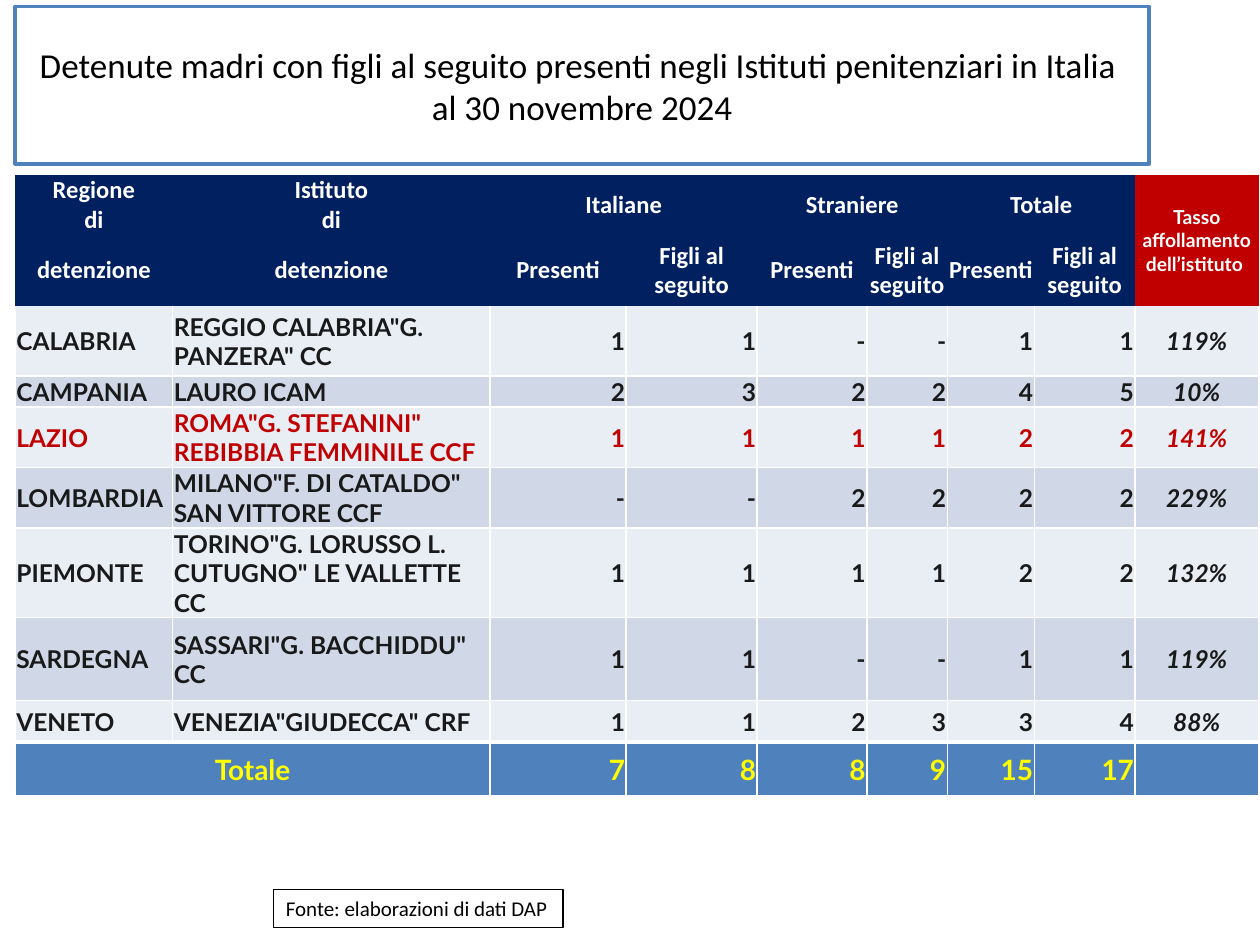
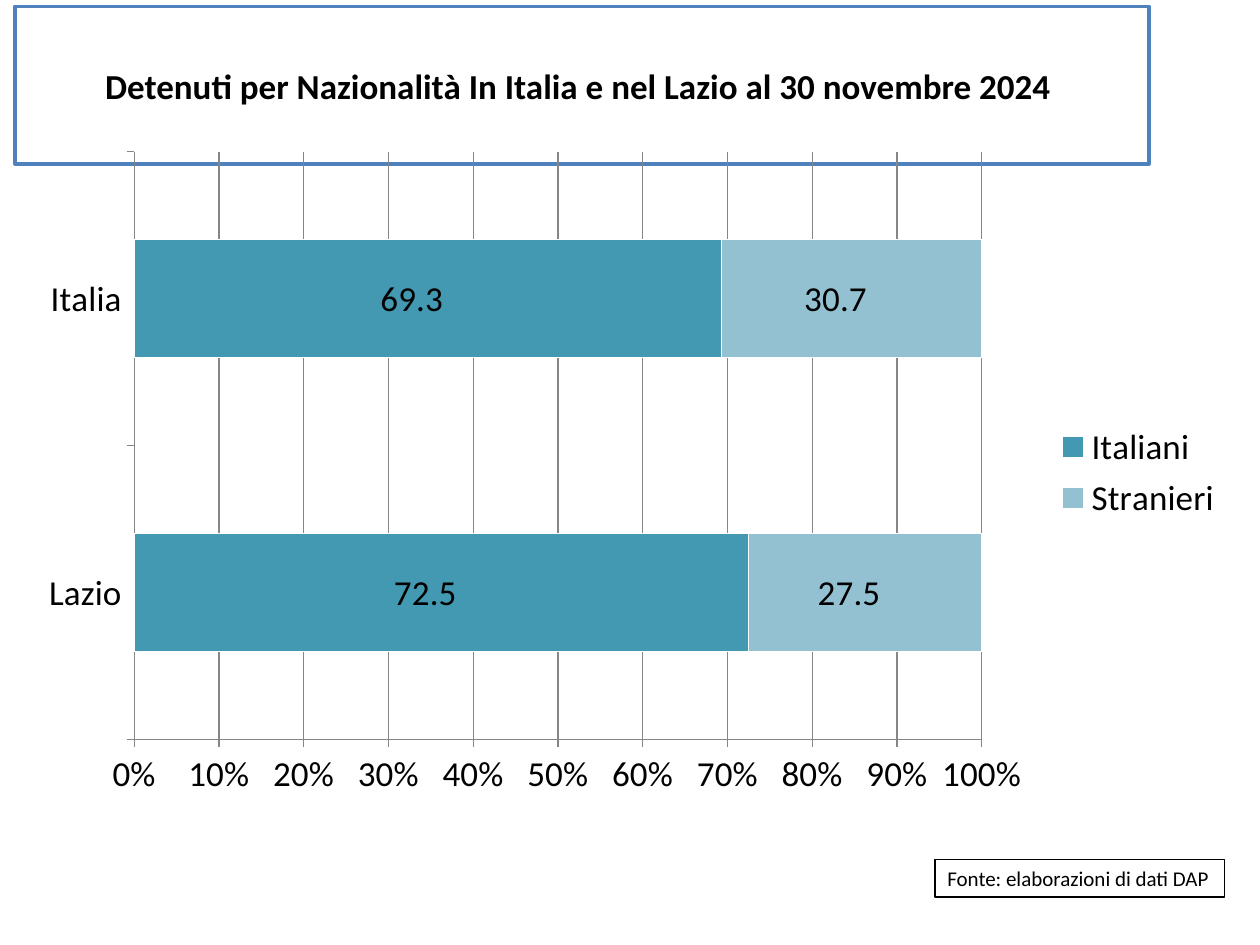
from lxml.etree import SubElement
from pptx import Presentation
from pptx.chart.data import CategoryChartData
from pptx.dml.color import RGBColor
from pptx.enum.chart import XL_CHART_TYPE, XL_LABEL_POSITION, XL_LEGEND_POSITION, XL_TICK_MARK
from pptx.enum.shapes import MSO_SHAPE
from pptx.enum.text import MSO_ANCHOR, PP_ALIGN
from pptx.oxml import parse_xml
from pptx.oxml.ns import nsdecls, qn
from pptx.util import Inches, Pt

# Colours
BLACK = RGBColor(0x00, 0x00, 0x00)
WHITE = RGBColor(0xFF, 0xFF, 0xFF)
BLUE = RGBColor(0x4F, 0x81, 0xBD)
NAVY = RGBColor(0x00, 0x20, 0x60)
RED = RGBColor(0xC0, 0x00, 0x00)
YELLOW = RGBColor(0xFF, 0xFF, 0x00)
INK = RGBColor(0x19, 0x19, 0x1A)
PALE = RGBColor(0xE9, 0xED, 0xF4)
LIGHT = RGBColor(0xD0, 0xD8, 0xE8)
GREY = RGBColor(0x86, 0x86, 0x86)
TEAL = RGBColor(0x43, 0x99, 0xB1)
SKY = RGBColor(0x93, 0xC1, 0xD2)

# Contents of the table
COLUMN_WIDTHS = [1.25, 2.52, 1.08, 1.04, 0.87, 0.64, 0.69, 0.8, 0.98]
ROW_HEIGHTS = [0.24, 0.24, 0.55, 0.56, 0.24, 0.48, 0.48, 0.71, 0.66, 0.33, 0.43]
PRISONS = [
    ("CALABRIA", 'REGGIO CALABRIA"G. PANZERA" CC', "1", "1", "-", "-", "1", "1", "119%"),
    ("CAMPANIA", "LAURO ICAM", "2", "3", "2", "2", "4", "5", "10%"),
    ("LAZIO", 'ROMA"G. STEFANINI" REBIBBIA FEMMINILE CCF', "1", "1", "1", "1", "2", "2", "141%"),
    ("LOMBARDIA", 'MILANO"F. DI CATALDO" SAN VITTORE CCF', "-", "-", "2", "2", "2", "2", "229%"),
    ("PIEMONTE", 'TORINO"G. LORUSSO L. CUTUGNO" LE VALLETTE CC',
     "1", "1", "1", "1", "2", "2", "132%"),
    ("SARDEGNA", 'SASSARI"G. BACCHIDDU" CC', "1", "1", "-", "-", "1", "1", "119%"),
    ("VENETO", 'VENEZIA"GIUDECCA" CRF', "1", "1", "2", "3", "3", "4", "88%"),
]
TOTALS = ["7", "8", "8", "9", "15", "17"]
HEADER_ROWS = 3
LABEL_FORMAT = "#,##0.0\\ _€_-"


class Report:
    """Holds the deck, its style and the current page."""

    font = "Calibri"
    table_font = "Lato"

    def __init__(self):
        self.deck = Presentation()
        self.deck.slide_width, self.deck.slide_height = Inches(10), Inches(7.5)
        self.page = None

    def new_page(self):
        self.page = self.deck.slides.add_slide(self.deck.slide_layouts[6])

    def add_span(self, paragraph, text, size, color=BLACK, font=None, bold=False, italic=False):
        span = paragraph.add_run()
        span.text = text
        span.font.name = font or self.font
        span.font.size = Pt(size)
        span.font.bold, span.font.italic = bold, italic
        span.font.color.rgb = color

    def framed_box(self, left, top, width, height, line_color, line_width):
        box = self.page.shapes.add_shape(
            MSO_SHAPE.RECTANGLE, Inches(left), Inches(top), Inches(width), Inches(height))
        box.shadow.inherit = False
        box.fill.solid()
        box.fill.fore_color.rgb = WHITE
        box.line.color.rgb = line_color
        box.line.width = Pt(line_width)
        return box.text_frame

    def title(self, *lines, bold=False):
        frame = self.framed_box(0.12, 0.05, 9, 1.25, BLUE, 2)
        frame.word_wrap = True
        frame.vertical_anchor = MSO_ANCHOR.MIDDLE
        paragraph = frame.paragraphs[0]
        paragraph.alignment = PP_ALIGN.CENTER
        for index, line in enumerate(lines):
            if index:
                paragraph.add_line_break()
            self.add_span(paragraph, line, 20, bold=bold)

    def source_note(self, left, top):
        frame = self.framed_box(left, top, 2.3, 0.3, BLACK, 0.75)
        frame.word_wrap = False
        frame.vertical_anchor = MSO_ANCHOR.TOP
        paragraph = frame.paragraphs[0]
        paragraph.alignment = PP_ALIGN.LEFT
        self.add_span(paragraph, "Fonte: elaborazioni di dati DAP", 12)

    def table(self, left, top, widths, heights):
        table = self.page.shapes.add_table(
            len(heights), len(widths), Inches(left), Inches(top),
            Inches(sum(widths)), Inches(sum(heights))).table
        table.first_row = table.horz_banding = False
        for column, width in zip(table.columns, widths):
            column.width = Inches(width)
        for row, height in zip(table.rows, heights):
            row.height = Inches(height)
        return table

    def paint_cell(self, cell, fill, borders, margin=0.0):
        """Borders are widths in points for left, right, top and bottom; 0 hides one."""
        cell.fill.solid()
        cell.fill.fore_color.rgb = fill
        cell.vertical_anchor = MSO_ANCHOR.MIDDLE
        cell.margin_left = cell.margin_right = cell.margin_top = Inches(margin)
        cell.margin_bottom = 0
        properties = cell._tc.get_or_add_tcPr()
        for index, (side, width) in enumerate(zip("LRTB", borders)):
            paint = (f'<a:solidFill><a:srgbClr val="{WHITE}"/></a:solidFill>'
                     if width else "<a:noFill/>")
            properties.insert(index, parse_xml(
                f'<a:ln{side} {nsdecls("a")} w="{Pt(width)}">{paint}</a:ln{side}>'))

    def fill_cell(self, cell, text, align, size=14, **style):
        paragraph = cell.text_frame.paragraphs[0]
        paragraph.alignment = align
        self.add_span(paragraph, text, size, bold=True, **style)

    def stacked_bars(self, left, top, width, height, categories, series, plot_area):
        data = CategoryChartData(number_format=LABEL_FORMAT)
        data.categories = categories
        for name, values, _ in series:
            data.add_series(name, values)
        chart = self.page.shapes.add_chart(
            XL_CHART_TYPE.BAR_STACKED_100, Inches(left), Inches(top),
            Inches(width), Inches(height), data).chart
        chart.has_title = False
        chart.font.name = self.font
        chart.font.size = Pt(20)
        chart.font.color.rgb = BLACK
        chart.has_legend = True
        chart.legend.position = XL_LEGEND_POSITION.RIGHT
        chart.legend.include_in_layout = False

        # Axes
        for axis in (chart.category_axis, chart.value_axis):
            axis.major_tick_mark = XL_TICK_MARK.OUTSIDE
            axis.minor_tick_mark = XL_TICK_MARK.NONE
            axis.format.line.color.rgb = GREY
        chart.category_axis.has_major_gridlines = False
        axis = chart.value_axis
        axis.has_major_gridlines = True
        axis.major_gridlines.format.line.color.rgb = GREY
        axis.tick_labels.number_format = "0%"
        axis.tick_labels.number_format_is_linked = False

        # Bars and their labels
        plot = chart.plots[0]
        plot.vary_by_categories = False
        plot.gap_width, plot.overlap = 150, 100
        for bars, (_, _, color) in zip(plot.series, series):
            bars.format.fill.solid()
            bars.format.fill.fore_color.rgb = color
            bars.format.line.color.rgb = WHITE
            labels = bars.data_labels
            labels.show_value = True
            labels.position = XL_LABEL_POSITION.CENTER
            labels.number_format = LABEL_FORMAT
            labels.number_format_is_linked = False

        # Fixed place of the plot, as fractions of the chart
        area = chart._chartSpace.chart.plotArea
        for old in area.findall(qn("c:layout")):
            area.remove(old)
        layout = parse_xml(f'<c:layout {nsdecls("c")}/>')
        manual = SubElement(layout, qn("c:manualLayout"))
        settings = [("layoutTarget", "inner"), ("xMode", "edge"), ("yMode", "edge"),
                    *zip("xywh", plot_area)]
        for tag, value in settings:
            SubElement(manual, qn(f"c:{tag}")).set("val", str(value))
        area.insert(0, layout)


def mothers_page(report):
    report.new_page()
    report.title("Detenute madri con figli al seguito presenti negli Istituti penitenziari in Italia ",
                 "al 30 novembre 2024")
    report.source_note(2.17, 7.06)
    table = report.table(0.12, 1.39, COLUMN_WIDTHS, ROW_HEIGHTS)
    last_column, last_row = len(COLUMN_WIDTHS) - 1, len(ROW_HEIGHTS) - 1

    # Header
    for row in range(HEADER_ROWS):
        for column in range(last_column + 1):
            fill = RED if column == last_column else NAVY
            report.paint_cell(table.cell(row, column), fill, (0, 0, 0, 0))
    headings = {(0, 0): "Regione", (0, 1): "Istituto"}
    for column in (0, 1):
        headings[1, column] = "di"
        headings[2, column] = "detenzione"
    for column, group in zip((2, 4, 6), ("Italiane", "Straniere", "Totale")):
        table.cell(0, column).merge(table.cell(1, column + 1))
        headings[0, column] = group
        headings[2, column] = "Presenti"
        headings[2, column + 1] = "Figli al seguito"
    for position, text in headings.items():
        report.fill_cell(table.cell(*position), text, PP_ALIGN.CENTER, color=WHITE)
    rate = table.cell(0, last_column)
    rate.merge(table.cell(HEADER_ROWS - 1, last_column))
    report.fill_cell(rate, "Tasso affollamento dell’istituto ", PP_ALIGN.CENTER, 11,
                     color=WHITE, font=report.table_font)

    # One row for each prison
    aligns = [PP_ALIGN.LEFT] * 2 + [PP_ALIGN.RIGHT] * 6 + [PP_ALIGN.CENTER]
    for index, prison in enumerate(PRISONS):
        row = HEADER_ROWS + index
        borders = (1, 1, 1 if index else 0, 3 if row == last_row - 1 else 1)
        for column, (text, align) in enumerate(zip(prison, aligns)):
            cell = table.cell(row, column)
            report.paint_cell(cell, LIGHT if index % 2 else PALE, borders, 0.01)
            report.fill_cell(cell, text, align, color=RED if prison[0] == "LAZIO" else INK,
                             font=report.table_font, italic=column == last_column)

    # Totals
    for column in range(last_column + 1):
        report.paint_cell(table.cell(last_row, column), BLUE, (1, 1, 3, 1), 0.01)
    total = table.cell(last_row, 0)
    total.merge(table.cell(last_row, 1))
    style = {"size": 16, "color": YELLOW, "font": report.table_font}
    report.fill_cell(total, "Totale", PP_ALIGN.CENTER, **style)
    for column, text in enumerate(TOTALS, 2):
        report.fill_cell(table.cell(last_row, column), text, PP_ALIGN.RIGHT, **style)


def nationality_page(report):
    report.new_page()
    report.title("Detenuti per Nazionalità In Italia e nel Lazio al 30 novembre 2024 ", bold=True)
    report.source_note(7.42, 6.82)
    report.stacked_bars(
        0.2, 1.1, 9.61, 5.3, ["Lazio", "Italia"],
        [("Italiani", (72.5, 69.3), TEAL), ("Stranieri", (27.5, 30.7), SKY)],
        plot_area=(0.09, 0.02, 0.7, 0.88))


def main():
    report = Report()
    mothers_page(report)
    nationality_page(report)
    report.deck.save("out.pptx")


if __name__ == "__main__":
    main()
